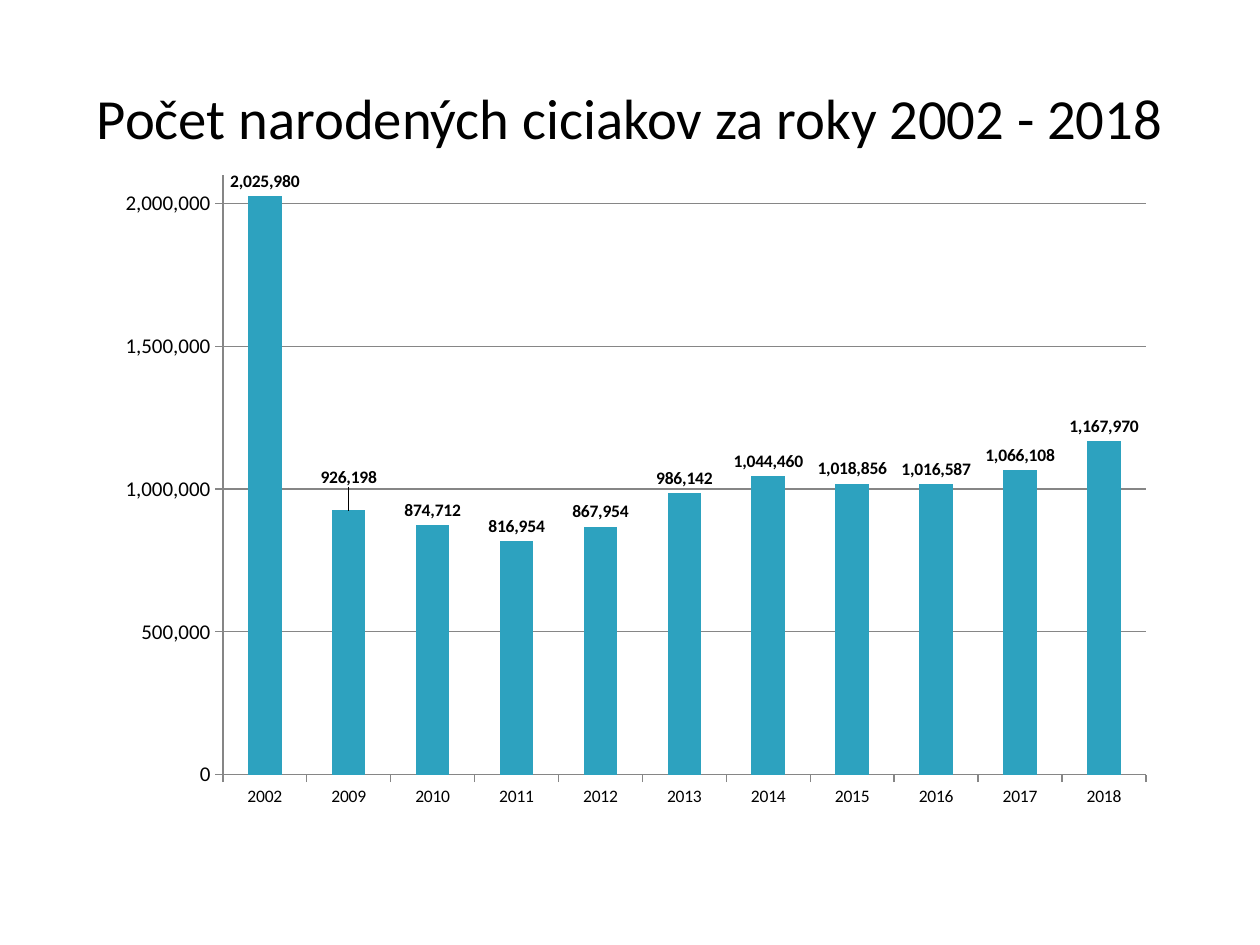
from lxml import etree
from pptx import Presentation
from pptx.chart.data import CategoryChartData
from pptx.dml.color import RGBColor
from pptx.enum.chart import XL_CHART_TYPE, XL_LABEL_POSITION, XL_TICK_MARK
from pptx.enum.text import MSO_ANCHOR, PP_ALIGN
from pptx.oxml.ns import qn
from pptx.util import Pt

COLUMNS = XL_CHART_TYPE.COLUMN_CLUSTERED
OUTSIDE_END = XL_LABEL_POSITION.OUTSIDE_END
TICK_OUT = XL_TICK_MARK.OUTSIDE
MIDDLE = MSO_ANCHOR.MIDDLE
CENTER = PP_ALIGN.CENTER

BLACK = RGBColor(0x00, 0x00, 0x00)
TEAL = RGBColor(0x2D, 0xA2, 0xBF)
GREY = RGBColor(0x86, 0x86, 0x86)

EMU_PER_PX = 914400 / 126
THOUSANDS = "#,##0"
BIRTHS = {
    "2002": 2025980,
    "2009": 926198,
    "2010": 874712,
    "2011": 816954,
    "2012": 867954,
    "2013": 986142,
    "2014": 1044460,
    "2015": 1018856,
    "2016": 1016587,
    "2017": 1066108,
    "2018": 1167970,
}


def px(length):
    return round(length * EMU_PER_PX)


class BirthsSlide:
    """Holds the style and the current slide, and adds its elements."""

    family = "Calibri"

    def __init__(self, deck):
        self.slide = deck.slides.add_slide(deck.slide_layouts[6])

    def style(self, font, size, bold=False):
        font.name = self.family
        font.size = Pt(size)
        font.bold = bold
        font.color.rgb = BLACK

    def title(self, wording, box, size):
        frame = self.slide.shapes.add_textbox(*map(px, box)).text_frame
        frame.word_wrap = True
        frame.vertical_anchor = MIDDLE
        heading = frame.paragraphs[0]
        heading.text = wording
        heading.alignment = CENTER
        self.style(heading.font, size)

    def layout(self, **values):
        layout = etree.Element(qn("c:layout"))
        manual = etree.SubElement(layout, qn("c:manualLayout"))
        for tag, value in values.items():
            etree.SubElement(manual, qn(f"c:{tag}")).set("val", str(value))
        return layout

    def axis(self, axis, size):
        axis.major_tick_mark = TICK_OUT
        axis.format.line.color.rgb = GREY
        self.style(axis.tick_labels.font, size)

    def value_labels(self, labels):
        labels.position = OUTSIDE_END
        self.style(labels.font, 10, bold=True)

    def column_chart(self, counts, box):
        births = CategoryChartData(number_format=THOUSANDS)
        births.categories = list(counts)
        births.add_series("Series 1", list(counts.values()))
        chart = self.slide.shapes.add_chart(COLUMNS, *map(px, box), births).chart
        chart.has_title = False
        chart.has_legend = False
        self.style(chart.font, 10)

        self.axis(chart.category_axis, 10)
        scale = chart.value_axis
        self.axis(scale, 12)
        scale.minimum_scale = 0
        scale.maximum_scale = 2100000
        scale.major_unit = 500000
        scale.has_major_gridlines = True
        scale.major_gridlines.format.line.color.rgb = GREY
        scale.tick_labels.number_format = THOUSANDS
        scale.tick_labels.number_format_is_linked = False

        plot = chart.plots[0]
        plot.gap_width = 150
        plot.vary_by_categories = False
        columns = plot.series[0]
        columns.format.fill.solid()
        columns.format.fill.fore_color.rgb = TEAL
        columns.data_labels.show_value = True
        columns.data_labels.number_format = THOUSANDS
        columns.data_labels.number_format_is_linked = False
        self.value_labels(columns.data_labels)

        self.value_labels(columns.points[1].data_label)
        raised = next(columns.data_labels._element.iter(qn("c:dLbl")))
        raised.insert(1, self.layout(x=0, y=-0.025))

        area = chart._chartSpace.chart.plotArea
        for automatic in area.findall(qn("c:layout")):
            area.remove(automatic)
        area.insert(0, self.layout(layoutTarget="inner", xMode="edge", yMode="edge",
                                   x=0.141, y=0.043, w=0.814, h=0.858))


def main():
    deck = Presentation()
    deck.slide_width, deck.slide_height = px(1260), px(945)
    births = BirthsSlide(deck)
    births.title("Počet narodených ciciakov za roky 2002 - 2018", (63, 38, 1134, 157), 32.4)
    births.column_chart(BIRTHS, (63, 145, 1134, 699))
    deck.save("out.pptx")


if __name__ == "__main__":
    main()
